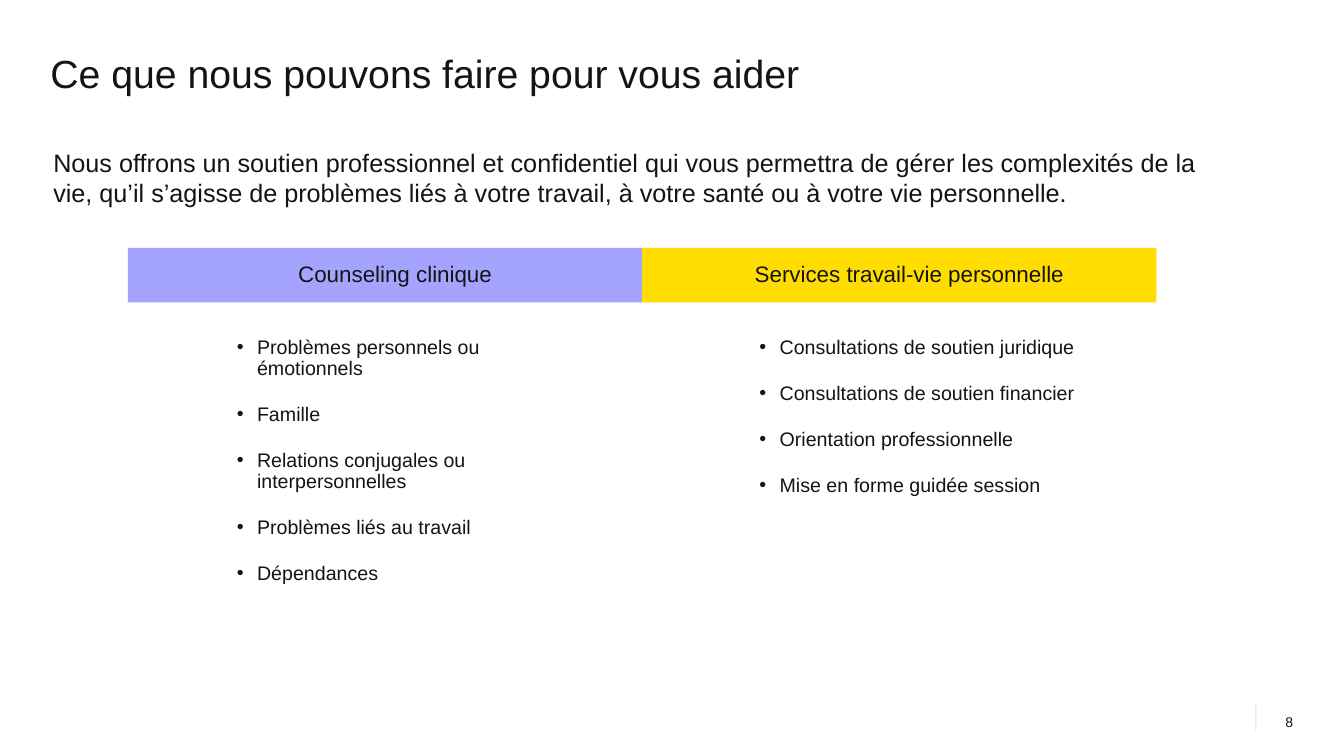
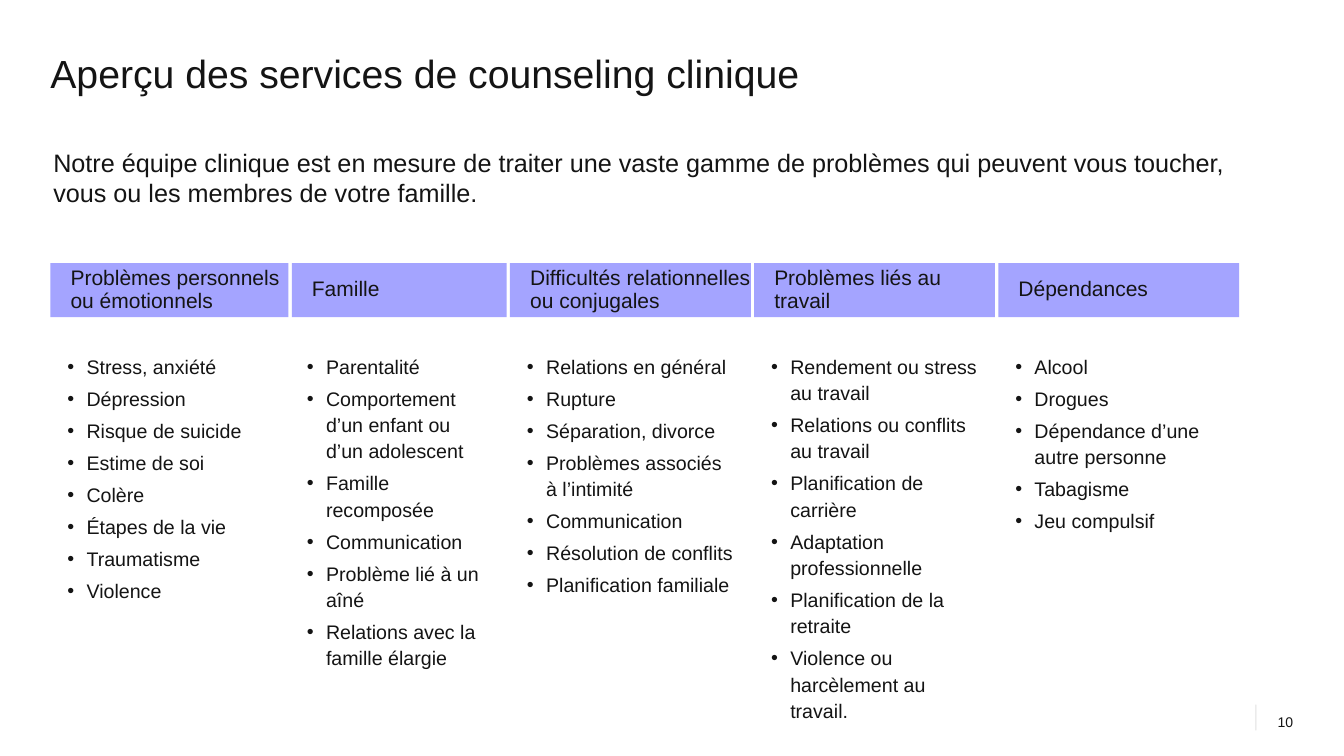
import copy

import lxml.etree
import pptx
import pptx.dml.color
import pptx.enum.shapes
import pptx.enum.text
import pptx.oxml.ns
import pptx.util

Pt = pptx.util.Pt
qn = pptx.oxml.ns.qn
ALIGN = pptx.enum.text.PP_ALIGN
ANCHOR = pptx.enum.text.MSO_ANCHOR

FONT = "Arial"
INK = "141414"
LILAC = "A4A4FF"
YELLOW = "FFDD01"

HELP_COLUMNS = [
    (LILAC, "Counseling clinique", 67, 258.5, [
        "Problèmes personnels ou émotionnels",
        "Famille",
        "Relations conjugales ou interpersonnelles",
        "Problèmes liés au travail",
        "Dépendances",
    ]),
    (YELLOW, "Services travail-vie personnelle", 73, 282, [
        "Consultations de soutien juridique",
        "Consultations de soutien financier",
        "Orientation professionnelle",
        "Mise en forme guidée session",
    ]),
]

SERVICE_COLUMNS = [
    (170, 15, "Problèmes personnels ou émotionnels", [
        "Stress, anxiété", "Dépression", "Risque de suicide", "Estime de soi",
        "Colère", "Étapes de la vie", "Traumatisme", "Violence",
    ]),
    (153.5, 13.7, "Famille", [
        "Parentalité", "Comportement d’un enfant ou d’un adolescent",
        "Famille recomposée", "Communication", "Problème lié à un aîné",
        "Relations avec la famille élargie",
    ]),
    (172, 15, "Difficultés relationnelles ou conjugales", [
        "Relations en général", "Rupture", "Séparation, divorce",
        "Problèmes associés à l’intimité", "Communication",
        "Résolution de conflits", "Planification familiale",
    ]),
    (172, 15, "Problèmes liés au travail", [
        "Rendement ou stress au travail", "Relations ou conflits au travail",
        "Planification de carrière", "Adaptation professionnelle",
        "Planification de la retraite", "Violence ou harcèlement au travail.",
    ]),
    (172, 15, "Dépendances", [
        "Alcool", "Drogues", "Dépendance d’une autre personne", "Tabagisme",
        "Jeu compulsif",
    ]),
]


def rgb(value):
    return pptx.dml.color.RGBColor.from_string(value)


def place(sp, x, y, w, h):
    sp.left, sp.top, sp.width, sp.height = Pt(x), Pt(y), Pt(w), Pt(h)


def frame(sp, insets, anchor=ANCHOR.TOP):
    tf = sp.text_frame
    tf.word_wrap = True
    tf.auto_size = pptx.enum.text.MSO_AUTO_SIZE.NONE
    tf.vertical_anchor = anchor
    tf.margin_left, tf.margin_top, tf.margin_right, tf.margin_bottom = map(Pt, insets)
    return tf


def write(p, text, size, align=ALIGN.LEFT, spacing=0.9, before=0, after=0):
    p.alignment = align
    p.line_spacing = spacing
    p.space_before, p.space_after = Pt(before), Pt(after)
    r = p.add_run()
    r.text = text
    r.font.name = FONT
    r.font.size = Pt(size)
    r.font.color.rgb = rgb(INK)


def add_bullet(p, margin, hanging):
    pPr = p._p.get_or_add_pPr()
    pPr.set("marL", str(Pt(margin)))
    pPr.set("indent", str(-Pt(hanging)))
    lxml.etree.SubElement(pPr, qn("a:buFont")).set("typeface", FONT)
    lxml.etree.SubElement(pPr, qn("a:buChar")).set("char", "•")


def add_heading(s, x, y, w, h, text, fill, size, align=ALIGN.LEFT):
    sp = s.shapes.add_shape(pptx.enum.shapes.MSO_SHAPE.RECTANGLE, Pt(x), Pt(y), Pt(w), Pt(h))
    sp.shadow.inherit = False
    sp.fill.solid()
    sp.fill.fore_color.rgb = rgb(fill)
    sp.line.fill.background()
    tf = frame(sp, (14.4, 0, 0, 0), ANCHOR.MIDDLE)
    write(tf.paragraphs[0], text, size, align)


def fill_list(sp, x, y, w, h, items, margin, hanging, spacing, before, after):
    place(sp, x, y, w, h)
    tf = frame(sp, (10.8, 10.8, 10.8, 0))
    for i, item in enumerate(items):
        p = tf.add_paragraph() if i else tf.paragraphs[0]
        add_bullet(p, margin, hanging)
        write(p, item, 14, spacing=spacing, before=before if i else 0, after=after)


def add_intro(s, x, y, w, h, text):
    sp = s.shapes.add_textbox(Pt(x), Pt(y), Pt(w), Pt(h))
    write(frame(sp, (7.2, 3.6, 7.2, 3.6)).paragraphs[0], text, 18, spacing=1.0)


def add_page_number(s, x, y, w, h, number):
    line = s.shapes.add_connector(
        pptx.enum.shapes.MSO_CONNECTOR.STRAIGHT, Pt(x), Pt(y), Pt(x), Pt(y + h))
    line.line.width = Pt(0.75)
    line.line.color.rgb = rgb(INK)
    spPr = line._element.spPr
    color = spPr.find(".//" + qn("a:srgbClr"))
    lxml.etree.SubElement(color, qn("a:alpha")).set("val", "12000")
    lxml.etree.SubElement(spPr, qn("a:effectLst"))
    sp = s.shapes.add_textbox(Pt(x + 7), Pt(y), Pt(w - 7), Pt(h))
    tf = frame(sp, (0, 0, 0, 0), ANCHOR.BOTTOM)
    write(tf.paragraphs[0], str(number), 10, ALIGN.RIGHT, 1.0)


def list_layout(prs, count):
    layout = prs.slide_layouts[3]
    lists = [ph for ph in layout.placeholders if ph.placeholder_format.idx in (1, 2)]
    for n in range(count - len(lists)):
        el = copy.deepcopy(lists[-1]._element)
        el.find(".//" + qn("p:ph")).set("idx", str(20 + n))
        el.find(".//" + qn("p:cNvPr")).set("id", str(20 + n))
        layout.shapes._spTree.append(el)
    return layout


def add_base(prs, title, intro, intro_width, number, count):
    s = prs.slides.add_slide(list_layout(prs, count))
    sp = s.shapes.title
    place(sp, 36, 39, 762, 54)
    write(frame(sp, (0, 0, 0, 0)).paragraphs[0], title, 28)
    add_intro(s, 31, 101.5, intro_width, 54, intro)
    add_page_number(s, 897, 503.3, 26.7, 18.4, number)
    return s, [ph for ph in s.placeholders if ph.placeholder_format.idx]


def add_help_columns(s, bodies, x, y, w):
    width = w / len(HELP_COLUMNS)
    for i, (fill, heading, offset, list_width, items) in enumerate(HELP_COLUMNS):
        left = x + i * width
        add_heading(s, left, y, width, 39, heading, fill, 16, ALIGN.CENTER)
        fill_list(bodies[i], left + offset, y + 53.3, list_width, 224, items,
                  14.4, 14.4, 0.9, 0, 17.6)


def add_service_columns(s, bodies, x, y, gap):
    for sp, (width, margin, heading, items) in zip(bodies, SERVICE_COLUMNS):
        add_heading(s, x, y, width, 38.5, heading, LILAC, 15)
        fill_list(sp, x, y + 52.5, width, 277, items, margin, 13.7, 1.12, 2, 2)
        x += width + gap


def main():
    prs = pptx.Presentation()
    prs.slide_width, prs.slide_height = Pt(960), Pt(540)

    s, bodies = add_base(
        prs, "Ce que nous pouvons faire pour vous aider",
        "Nous offrons un soutien professionnel et confidentiel qui vous permettra de gérer "
        "les complexités de la vie, qu’il s’agisse de problèmes liés à votre travail, "
        "à votre santé ou à votre vie personnelle.",
        844.5, 8, len(HELP_COLUMNS))
    add_help_columns(s, bodies, 91.4, 177.1, 734.6)

    s, bodies = add_base(
        prs, "Aperçu des services de counseling clinique",
        "Notre équipe clinique est en mesure de traiter une vaste gamme de problèmes qui "
        "peuvent vous toucher, vous ou les membres de votre famille.",
        889, 10, len(SERVICE_COLUMNS))
    add_service_columns(s, bodies, 36, 188, 2.4)

    prs.save("out.pptx")


if __name__ == "__main__":
    main()
